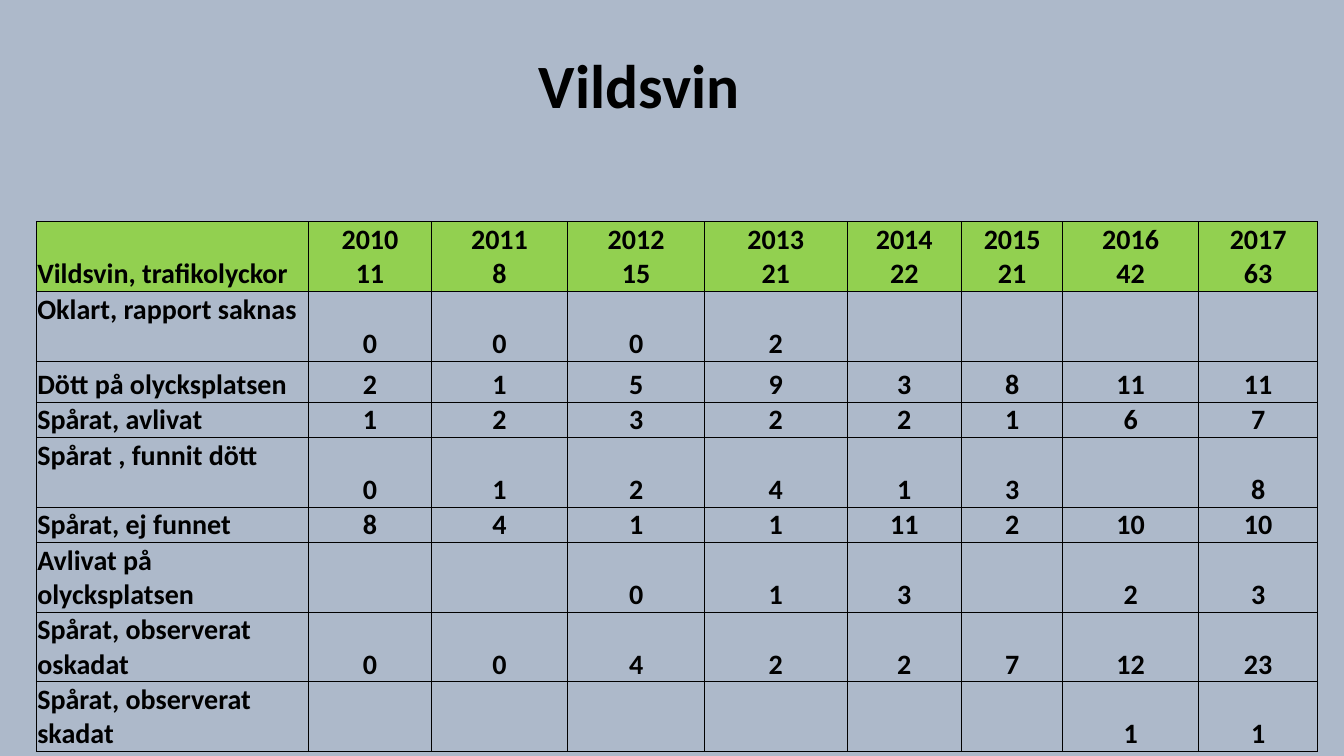
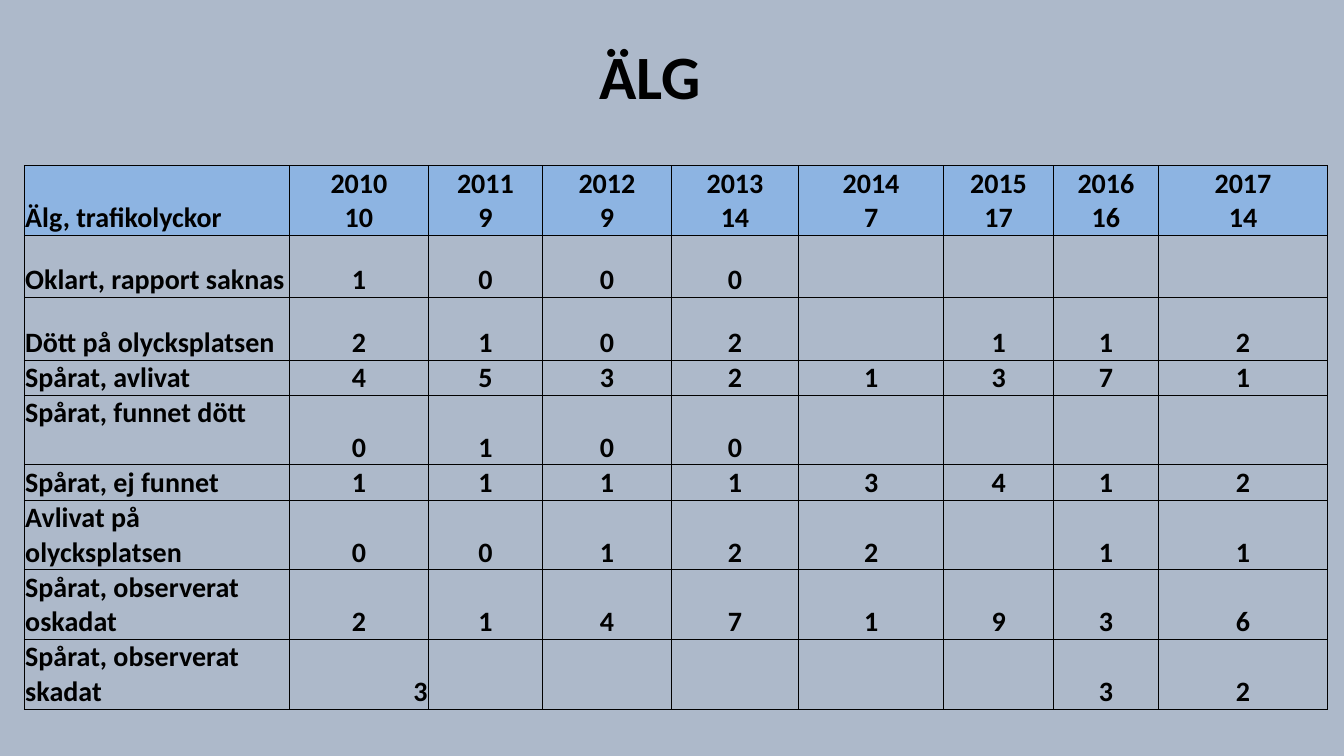
from lxml import etree
from pptx import Presentation
from pptx.dml.color import RGBColor
from pptx.enum.text import MSO_ANCHOR, PP_ALIGN
from pptx.oxml.ns import qn
from pptx.util import Inches, Pt

LEFT, CENTER, RIGHT = PP_ALIGN.LEFT, PP_ALIGN.CENTER, PP_ALIGN.RIGHT
TOP, MIDDLE, BOTTOM = MSO_ANCHOR.TOP, MSO_ANCHOR.MIDDLE, MSO_ANCHOR.BOTTOM

FONT = "Calibri"
BLACK = RGBColor(0x00, 0x00, 0x00)
BACKGROUND = RGBColor(0xAD, 0xB9, 0xCA)
GREEN = RGBColor(0x92, 0xD0, 0x50)
BLUE = RGBColor(0x8D, 0xB4, 0xE2)
YEARS = range(2010, 2018)
TITLE_ONLY = 5

BOAR_COLS = (2.7, 1.22, 1.35, 1.36, 1.41, 1.14, 1, 1.35, 1.18)
BOAR_HEIGHTS = (0.69, 0.69, 0.41, 0.35, 0.69, 0.35, 0.69, 0.69, 0.69)
BOAR_ROWS = (
    ("Vildsvin, trafikolyckor", 11, 8, 15, 21, 22, 21, 42, 63),
    ("Oklart, rapport saknas", 0, 0, 0, 2, "", "", "", ""),
    ("Dött på olycksplatsen", 2, 1, 5, 9, 3, 8, 11, 11),
    ("Spårat, avlivat", 1, 2, 3, 2, 2, 1, 6, 7),
    ("Spårat , funnit dött", 0, 1, 2, 4, 1, 3, "", 8),
    ("Spårat, ej funnet", 8, 4, 1, 1, 11, 2, 10, 10),
    ("Avlivat på olycksplatsen", "", "", 0, 1, 3, "", 2, 3),
    ("Spårat, observerat oskadat", 0, 0, 4, 2, 2, 7, 12, 23),
    ("Spårat, observerat skadat", "", "", "", "", "", "", 1, 1),
)

MOOSE_COLS = (2.63, 1.38, 1.13, 1.28, 1.26, 1.44, 1.09, 1.04, 1.68)
MOOSE_HEIGHTS = (0.69, 0.62, 0.62, 0.35, 0.69, 0.35, 0.69, 0.69, 0.69)
MOOSE_ROWS = (
    ("Älg, trafikolyckor", 10, 9, 9, 14, 7, 17, 16, 14),
    ("Oklart, rapport saknas", 1, 0, 0, 0, "", "", "", ""),
    ("Dött på olycksplatsen", 2, 1, 0, 2, "", 1, 1, 2),
    ("Spårat, avlivat", 4, 5, 3, 2, 1, 3, 7, 1),
    ("Spårat, funnet dött", 0, 1, 0, 0, "", "", "", ""),
    ("Spårat, ej funnet", 1, 1, 1, 1, 3, 4, 1, 2),
    ("Avlivat på olycksplatsen", 0, 0, 1, 2, 2, "", 1, 1),
    ("Spårat, observerat oskadat", 2, 1, 4, 7, 1, 9, 3, 6),
    ("Spårat, observerat skadat", 3, "", "", "", "", "", 3, 2),
)


def write_text(tf, text, size=20, align=CENTER, spacing=None):
    """Fill a text frame with bold black text, one paragraph per line."""
    tf.text = text
    for p in tf.paragraphs:
        p.alignment = align
        p.line_spacing = spacing
        for r in p.runs:
            r.font.name = FONT
            r.font.size = Pt(size)
            r.font.bold = True
            r.font.color.rgb = BLACK


def add_borders(cell, width=0.5):
    """Draw a thin black line on all four sides of a cell."""
    tc_pr = cell._tc.get_or_add_tcPr()
    for side in ("a:lnL", "a:lnR", "a:lnT", "a:lnB"):
        ln = etree.SubElement(tc_pr, qn(side), w=str(Pt(width)))
        fill = etree.SubElement(ln, qn("a:solidFill"))
        etree.SubElement(fill, qn("a:srgbClr"), val=str(BLACK))


def format_cell(cell, text, fill=None, align=CENTER, anchor=BOTTOM):
    """Set the text, margins, borders and fill of a cell."""
    cell.margin_left = cell.margin_right = cell.margin_top = Inches(0.01)
    cell.margin_bottom = 0
    cell.vertical_anchor = anchor
    write_text(cell.text_frame, text, align=align)
    add_borders(cell)
    if fill is None:
        cell.fill.background()
    else:
        cell.fill.solid()
        cell.fill.fore_color.rgb = fill


def add_accident_table(s, left, top, cols, heights, rows, header_fill,
                       top_labels, right_cells=()):
    """Add a table of accident outcomes by year, with totals in its header."""
    table = s.shapes.add_table(len(rows), len(cols), Inches(left), Inches(top),
                               Inches(sum(cols)), Inches(sum(heights))).table
    table.first_row = table.horz_banding = False
    for column, width in zip(table.columns, cols):
        column.width = Inches(width)
    for row, height in zip(table.rows, heights):
        row.height = Inches(height)
    fills = {0: header_fill, 1: BACKGROUND}
    for i, (label, *values) in enumerate(rows):
        fill = fills.get(i)
        format_cell(table.cell(i, 0), label, fill, LEFT,
                    TOP if i in top_labels else BOTTOM)
        for j, (year, value) in enumerate(zip(YEARS, values), start=1):
            text = f"{year}\n{value}" if i == 0 else str(value)
            align = RIGHT if (i, j) in right_cells else CENTER
            format_cell(table.cell(i, j), text, fill, align)


def add_titled_slide(prs, title, left, top, width, height):
    """Add a slide with a large centred title."""
    s = prs.slides.add_slide(prs.slide_layouts[TITLE_ONLY])
    sp = s.shapes.title
    sp.left, sp.top = Inches(left), Inches(top)
    sp.width, sp.height = Inches(width), Inches(height)
    sp.text_frame.vertical_anchor = MIDDLE
    write_text(sp.text_frame, title, size=44, spacing=0.9)
    return s


def main():
    """Build and save the presentation."""
    prs = Presentation()
    prs.slide_width, prs.slide_height = Inches(13.33), Inches(7.5)
    background = prs.slide_master.background.fill
    background.solid()
    background.fore_color.rgb = BACKGROUND

    s = add_titled_slide(prs, "Vildsvin", 0.27, 0.4, 12.14, 0.95)
    add_accident_table(s, 0.36, 2.2, BOAR_COLS, BOAR_HEIGHTS, BOAR_ROWS, GREEN,
                       top_labels=(1, 4))

    s = add_titled_slide(prs, "ÄLG", 0.92, 0.4, 11.05, 0.77)
    add_accident_table(s, 0.24, 1.64, MOOSE_COLS, MOOSE_HEIGHTS, MOOSE_ROWS, BLUE,
                       top_labels=(4,), right_cells=((8, 1),))

    prs.save("out.pptx")


if __name__ == "__main__":
    main()
